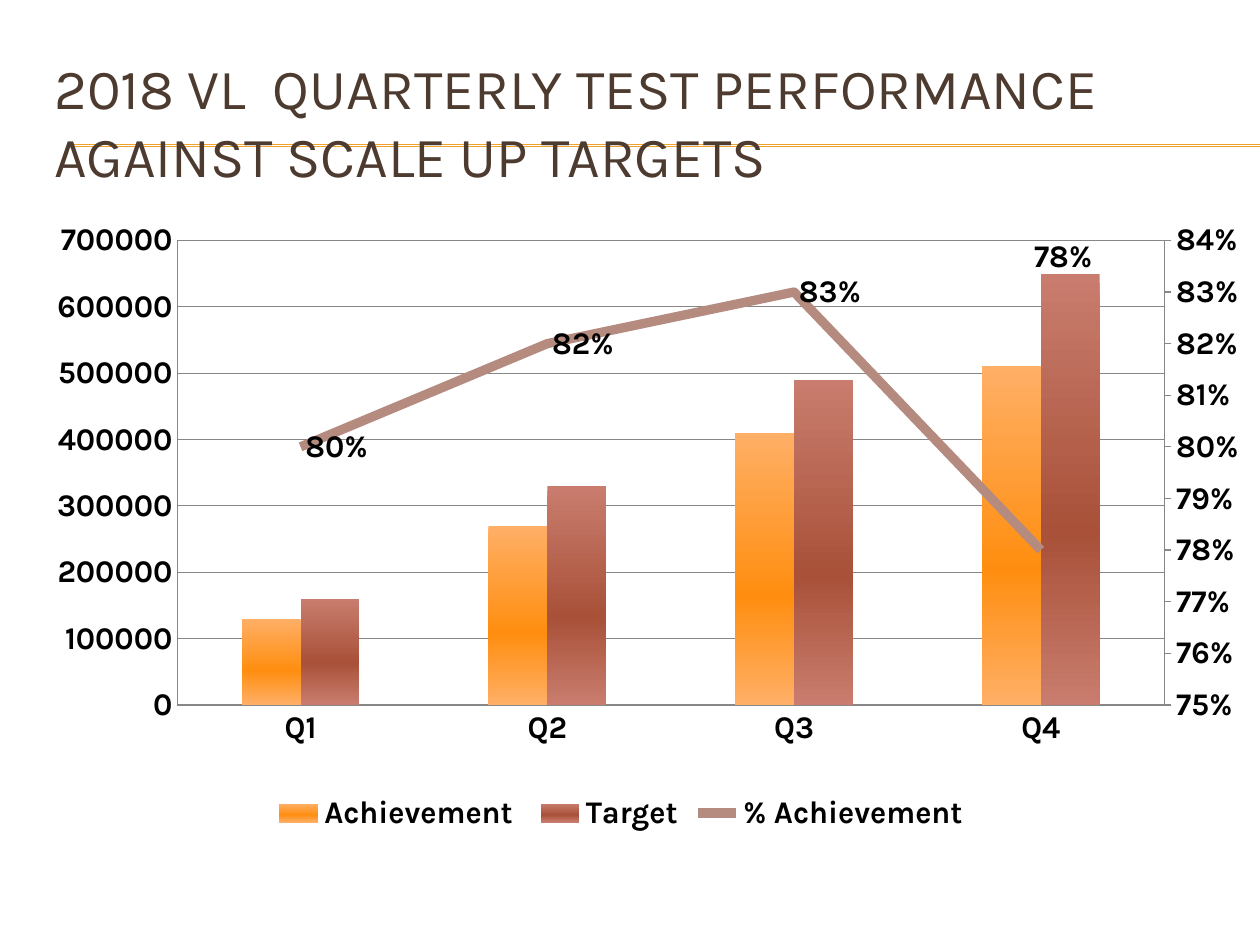
"""Build a slide with quarterly test results against scale up targets."""
import copy

import pptx
import pptx.chart.data
import pptx.dml.color
import pptx.enum.chart
import pptx.enum.dml
import pptx.enum.shapes
import pptx.enum.text
import pptx.oxml
import pptx.oxml.ns
import pptx.util

Cm = pptx.util.Cm
Pt = pptx.util.Pt
RGBColor = pptx.dml.color.RGBColor
BROWN = RGBColor(0x4E, 0x3B, 0x30)
GOLD = RGBColor(0xF0, 0xA2, 0x2E)
ROSE = RGBColor(0xB5, 0x8B, 0x80)
GRAY = RGBColor(0x87, 0x87, 0x87)
BLACK = RGBColor(0, 0, 0)
BARS = [
    (RGBColor(0xFF, 0xAF, 0x66), RGBColor(0xFF, 0x8E, 0x10)),
    (RGBColor(0xC9, 0x7D, 0x6E), RGBColor(0xA9, 0x51, 0x39)),
]
FACE = "Karla"
NS = pptx.oxml.ns.nsdecls("c", "a")


def put(thing, values):
    for name, value in values.items():
        setattr(thing, name, value)


def parse(text):
    return pptx.oxml.parse_xml(text.replace(">", f" {NS}>", 1))


deck = pptx.Presentation()
put(deck, {"slide_width": Cm(25.4), "slide_height": Cm(19.05)})
slide = deck.slides.add_slide(deck.slide_layouts[5])

for y in (2.92, 2.95):
    rule = slide.shapes.add_connector(
        pptx.enum.shapes.MSO_CONNECTOR.STRAIGHT, Cm(1.42), Cm(y), Cm(25.4), Cm(y))
    rule.line.color.rgb = GOLD
    rule.line.width = Pt(0.75)
    rule._element.spPr.append(pptx.oxml.parse_xml(f"<a:effectLst {NS}/>"))

title = slide.shapes.title
put(title, {"left": Cm(0.84), "top": Cm(1.27), "width": Cm(24.13), "height": Cm(2.34)})
title.text = "2018 VL  QUARTERLY TEST PERFORMANCE AGAINST SCALE UP TARGETS"
put(title.text_frame, {
    "word_wrap": True,
    "auto_size": pptx.enum.text.MSO_AUTO_SIZE.NONE,
    "vertical_anchor": pptx.enum.text.MSO_ANCHOR.MIDDLE,
})
line = title.text_frame.paragraphs[0]
line.alignment = pptx.enum.text.PP_ALIGN.LEFT
put(line.runs[0].font, {"name": FACE, "size": Pt(32.4)})
line.runs[0].font.color.rgb = BROWN
slide.shapes._spTree.append(title._element)

data = pptx.chart.data.CategoryChartData()
data.categories = ["Q1", "Q2", "Q3", "Q4"]
data.add_series("Achievement ", (130000, 270000, 410000, 510000))
data.add_series("Target", (160000, 330000, 490000, 650000))
data.add_series("% Achievement", (0.8, 0.82, 0.83, 0.78), number_format="0%")
chart = slide.shapes.add_chart(
    pptx.enum.chart.XL_CHART_TYPE.COLUMN_CLUSTERED,
    Cm(0.84), Cm(4.32), Cm(24.13), Cm(12.57), data).chart
put(chart, {"has_title": False, "has_legend": True})
put(chart.font, {"name": FACE, "size": Pt(18), "bold": True})
chart.font.color.rgb = BLACK
put(chart.legend, {
    "position": pptx.enum.chart.XL_LEGEND_POSITION.BOTTOM,
    "include_in_layout": False,
})

none = pptx.enum.chart.XL_TICK_MARK.NONE
put(chart.category_axis, {"major_tick_mark": none, "minor_tick_mark": none})
put(chart.value_axis, {
    "major_tick_mark": none, "minor_tick_mark": none, "has_major_gridlines": True,
    "minimum_scale": 0, "maximum_scale": 700000, "major_unit": 100000,
})
for part in (chart.category_axis, chart.value_axis, chart.value_axis.major_gridlines):
    part.format.line.color.rgb = GRAY
    part.format.line.width = Pt(0.75)

bars = chart.plots[0]
put(bars, {"gap_width": 219, "overlap": 0, "vary_by_categories": False})
for row, (light, dark) in zip(bars.series, BARS):
    fill = row.format.fill
    fill.gradient()
    fill.gradient_angle = 270
    for stop, color, place in zip(fill.gradient_stops, (light, dark), (0, 0.6)):
        stop.color.rgb = color
        stop.position = place
    stops = row._element.xpath(".//a:gsLst")[0]
    last = copy.deepcopy(stops[0])
    last.set("pos", "100000")
    stops.append(last)

area = bars._element.getparent()
for old in area.xpath("./c:layout"):
    area.remove(old)
area.insert(0, parse(
    '<c:layout><c:manualLayout><c:layoutTarget val="inner"/>'
    '<c:xMode val="edge"/><c:yMode val="edge"/><c:x val="0.117"/><c:y val="0.042"/>'
    '<c:w val="0.852"/><c:h val="0.745"/></c:manualLayout></c:layout>'))

rate = bars.series[2]._element
for flag in rate.xpath("./c:invertIfNegative"):
    rate.remove(flag)
group = parse(
    '<c:lineChart><c:grouping val="standard"/><c:varyColors val="0"/>'
    '<c:marker val="1"/><c:axId val="5001"/><c:axId val="5002"/></c:lineChart>')
group.insert(2, rate)
bars._element.addnext(group)
area.xpath("./c:valAx")[-1].addnext(parse(
    '<c:valAx><c:axId val="5002"/><c:scaling><c:orientation val="minMax"/>'
    '<c:max val="0.84"/><c:min val="0.75"/></c:scaling><c:delete val="0"/>'
    '<c:axPos val="r"/><c:numFmt formatCode="0%" sourceLinked="0"/>'
    '<c:majorTickMark val="out"/><c:minorTickMark val="none"/>'
    '<c:tickLblPos val="nextTo"/><c:spPr><a:ln w="9525"><a:solidFill>'
    f'<a:srgbClr val="{GRAY}"/></a:solidFill></a:ln></c:spPr>'
    '<c:crossAx val="5001"/><c:crosses val="max"/>'
    '<c:crossBetween val="between"/><c:majorUnit val="0.01"/></c:valAx>'))
area.xpath("./c:valAx")[-1].addnext(parse(
    '<c:catAx><c:axId val="5001"/><c:scaling><c:orientation val="minMax"/>'
    '</c:scaling><c:delete val="1"/><c:axPos val="b"/><c:crossAx val="5002"/>'
    '<c:crosses val="autoZero"/></c:catAx>'))

trend = chart.plots[1].series[0]
trend.smooth = False
trend.format.line.color.rgb = ROSE
trend.format.line.width = Pt(5.5)
trend.marker.style = pptx.enum.chart.XL_MARKER_STYLE.NONE
right = pptx.enum.chart.XL_LABEL_POSITION.RIGHT
tags = trend.data_labels
put(tags, {
    "show_value": True, "number_format": "0%",
    "number_format_is_linked": False, "position": right,
})
tag = trend.points[3].data_label
tag.position = right
for font in (tags.font, tag.font):
    put(font, {"name": FACE, "size": Pt(18), "bold": True})
    font.color.rgb = BLACK
for lead in rate.xpath(".//c:showLeaderLines"):
    lead.set("val", "0")
rate.xpath(".//c:dLbl/c:idx")[0].addnext(parse(
    '<c:layout><c:manualLayout><c:x val="-0.01"/><c:y val="-0.47"/>'
    '</c:manualLayout></c:layout>'))

deck.save("out.pptx")
